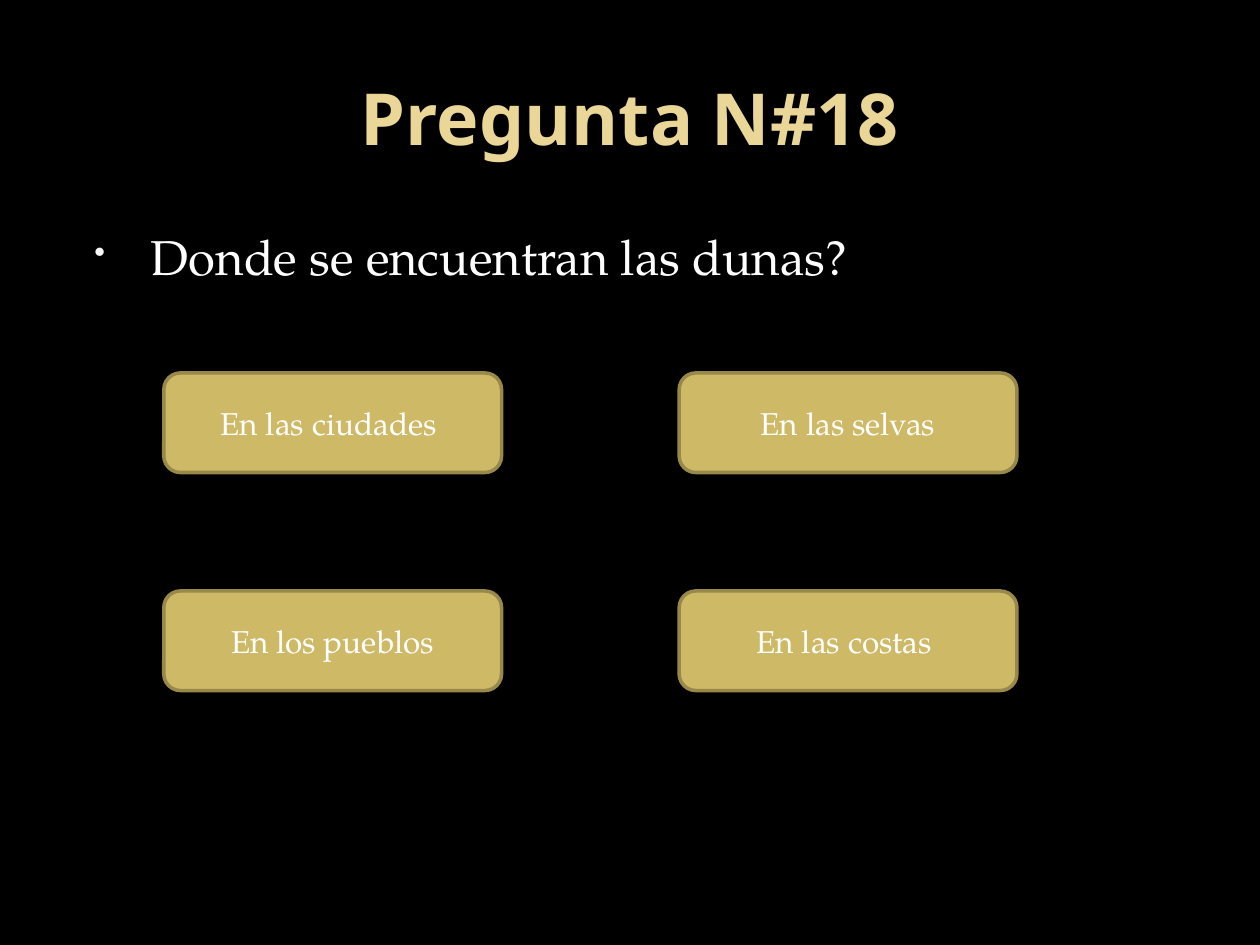
from dataclasses import dataclass

import lxml.etree
import pptx
import pptx.dml.color
import pptx.enum.shapes
import pptx.enum.text
import pptx.oxml.ns
import pptx.util

Pt = pptx.util.Pt
PP_ALIGN = pptx.enum.text.PP_ALIGN
ANCHOR = pptx.enum.text.MSO_ANCHOR

BLACK, WHITE = "000000", "FFFFFF"
GOLD, DARK_GOLD, PALE_GOLD, BULLET = "CEB966", "98894B", "EAD696", "F9F9F9"
TITLE_FONT, BODY_FONT = "Noto Sans", "TeX Gyre Pagella"

ANSWER_LEFT, ANSWER_TOP = 93.6, 213.1
ANSWER_WIDTH, ANSWER_HEIGHT = 193, 56.9
COLUMN_STEP, ROW_STEP = 294.5, 124.6


@dataclass
class Answer:
    text: str
    column: int
    row: int


ANSWERS = [
    Answer("En las ciudades ", 0, 0),
    Answer("En las selvas", 1, 0),
    Answer("En los pueblos", 0, 1),
    Answer("En las costas ", 1, 1),
]


def rgb(value: str) -> pptx.dml.color.RGBColor:
    return pptx.dml.color.RGBColor.from_string(value)


def write(frame, text: str, font: str, size: float, color: str,
          align=PP_ALIGN.CENTER, anchor=ANCHOR.MIDDLE, bold: bool = False):
    """Fill a text frame with one styled paragraph and return it."""
    frame.word_wrap = True
    frame.auto_size = pptx.enum.text.MSO_AUTO_SIZE.NONE
    frame.vertical_anchor = anchor
    paragraph = frame.paragraphs[0]
    paragraph.text = text
    paragraph.alignment = align
    paragraph.font.name = font
    paragraph.font.size = Pt(size)
    paragraph.font.bold = bold
    paragraph.font.color.rgb = rgb(color)
    return paragraph


def add_bullet(paragraph, indent: float, hanging: float, percent: int) -> None:
    properties = paragraph._p.get_or_add_pPr()
    properties.set("marL", str(Pt(indent)))
    properties.set("indent", str(-Pt(hanging)))
    qn = pptx.oxml.ns.qn
    color = lxml.etree.Element(qn("a:buClr"))
    lxml.etree.SubElement(color, qn("a:srgbClr"), val=BULLET)
    size = lxml.etree.Element(qn("a:buSzPct"), val=str(percent * 1000))
    character = lxml.etree.Element(qn("a:buChar"), char="•")
    default_font = properties.find(qn("a:defRPr"))
    for element in (color, size, character):
        default_font.addprevious(element)


def add_answer(slide, answer: Answer) -> None:
    button = slide.shapes.add_shape(
        pptx.enum.shapes.MSO_SHAPE.ROUNDED_RECTANGLE,
        Pt(ANSWER_LEFT + answer.column * COLUMN_STEP),
        Pt(ANSWER_TOP + answer.row * ROW_STEP),
        Pt(ANSWER_WIDTH), Pt(ANSWER_HEIGHT))
    button.shadow.inherit = False
    button.fill.solid()
    button.fill.fore_color.rgb = rgb(GOLD)
    button.line.color.rgb = rgb(DARK_GOLD)
    button.line.width = Pt(2)
    write(button.text_frame, answer.text, BODY_FONT, 18, WHITE)


def main() -> None:
    deck = pptx.Presentation()
    deck.slide_width, deck.slide_height = Pt(720), Pt(540)
    slide = deck.slides.add_slide(deck.slide_layouts.get_by_name("Title Only"))
    slide.background.fill.solid()
    slide.background.fill.fore_color.rgb = rgb(BLACK)

    title = slide.shapes.title
    title.left, title.top = Pt(36), Pt(21.6)
    title.width, title.height = Pt(648), Pt(90)
    write(title.text_frame, "Pregunta N#18", TITLE_FONT, 41, PALE_GOLD, bold=True)

    question = slide.shapes.add_textbox(Pt(36), Pt(126), Pt(648), Pt(370.8))
    line = write(question.text_frame, "Donde se encuentran las dunas?", BODY_FONT,
                 28, WHITE, PP_ALIGN.LEFT, ANCHOR.TOP)
    line.space_before = Pt(5.6)
    add_bullet(line, indent=43.2, hanging=32.4, percent=65)

    for answer in ANSWERS:
        add_answer(slide, answer)

    deck.save("out.pptx")


if __name__ == "__main__":
    main()
